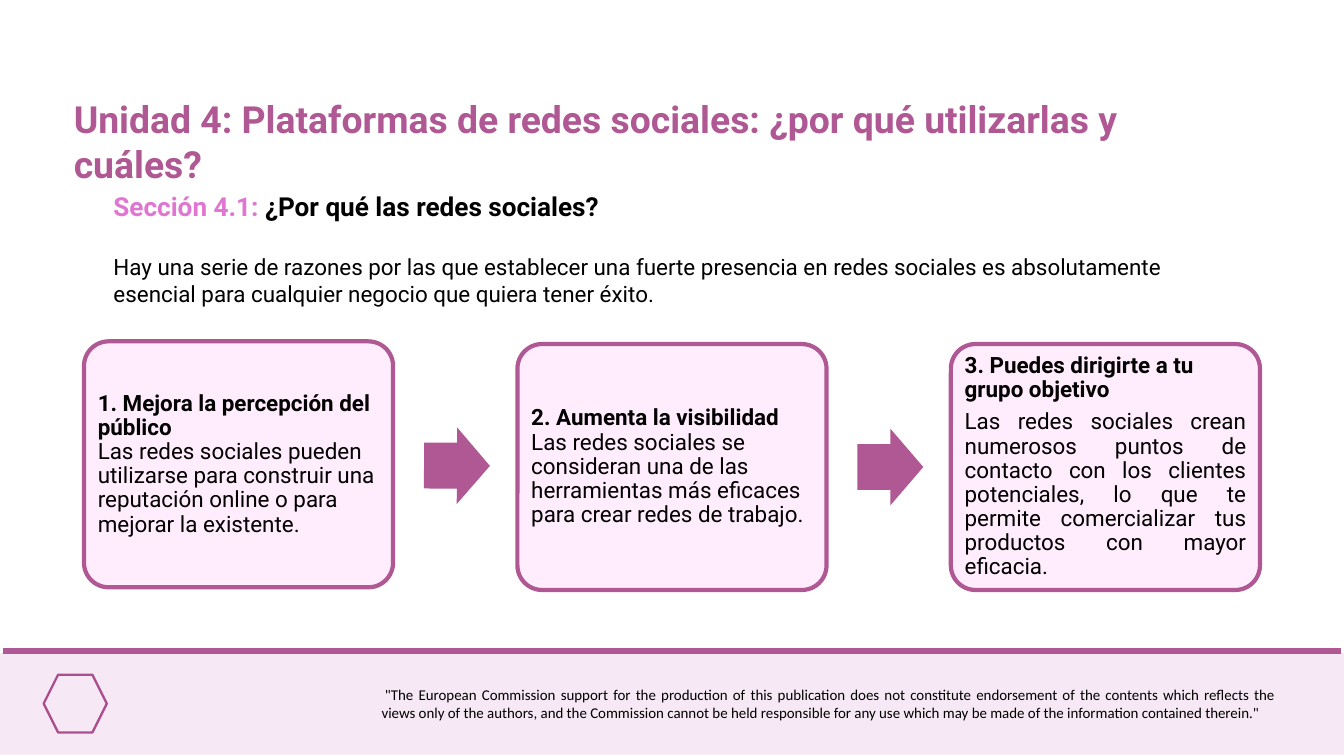
import pptx
import pptx.dml.color
import pptx.enum.shapes
import pptx.enum.text
import pptx.oxml
import pptx.util

Inches = pptx.util.Inches
Shapes = pptx.enum.shapes.MSO_SHAPE
Anchor = pptx.enum.text.MSO_ANCHOR
Align = pptx.enum.text.PP_ALIGN

COLORS = {
    "plum": "B05894",
    "orchid": "E076D1",
    "blush": "FFECFC",
    "footer": "F6E9F5",
    "icon": "AB4E8E",
    "text": "000000",
}

CARD_LEFT, CARD_PITCH = 1.25, 6.45
CARD_WIDTH, CARD_HEIGHT = 4.6, 3.66
CARDS = [
    (5.08, "1. Mejora la percepción del público",
     "Las redes sociales pueden utilizarse para construir una reputación online o para mejorar la existente."),
    (5.12, "2. Aumenta la visibilidad",
     "Las redes sociales se consideran una de las herramientas más eficaces para crear redes de trabajo."),
    (5.12, "3. Puedes dirigirte a tu grupo objetivo",
     "Las redes sociales crean numerosos puntos de contacto con los clientes potenciales, "
     "lo que te permite comercializar tus productos con mayor eficacia."),
]
ARROWS = [(6.36, 0.3), (6.38, 0)]


class SlideBuilder:
    def __init__(self, slide):
        self.slide = slide
        self.font = "Roboto"

    def color(self, name):
        return pptx.dml.color.RGBColor.from_string(COLORS[name])

    def format(self, run, size, color="text", bold=False, font=None):
        run.font.name = font or self.font
        run.font.size = pptx.util.Pt(size)
        run.font.bold = bold
        run.font.color.rgb = self.color(color)

    def shape(self, kind, left, top, width, height, fill=None, line=None, weight=1):
        shape = self.slide.shapes.add_shape(
            kind, Inches(left), Inches(top), Inches(width), Inches(height))
        shape.shadow.inherit = False
        if fill:
            shape.fill.solid()
            shape.fill.fore_color.rgb = self.color(fill)
        else:
            shape.fill.background()
        if line:
            shape.line.color.rgb = self.color(line)
            shape.line.width = pptx.util.Pt(weight)
        else:
            shape.line.fill.background()
        return shape

    def rule(self, left, right, top, color, weight):
        connector = self.slide.shapes.add_connector(
            pptx.enum.shapes.MSO_CONNECTOR.STRAIGHT,
            Inches(left), Inches(top), Inches(right), Inches(top))
        connector.line.color.rgb = self.color(color)
        connector.line.width = pptx.util.Pt(weight)
        connector._element.spPr.append(pptx.oxml.parse_xml(
            '<a:effectLst xmlns:a="http://schemas.openxmlformats.org/drawingml/2006/main"/>'))

    def text(self, left, top, width, height, text, size, **style):
        box = self.slide.shapes.add_textbox(
            Inches(left), Inches(top), Inches(width), Inches(height))
        text_frame = box.text_frame
        text_frame.word_wrap = True
        text_frame.text = text
        self.format(text_frame.paragraphs[0].runs[0], size, **style)
        return text_frame

    def card(self, left, top, heading, body, separate_body):
        shape = self.shape(Shapes.ROUNDED_RECTANGLE, left, top,
                           CARD_WIDTH, CARD_HEIGHT, "blush", "plum", 4.5)
        shape.adjustments[0] = 0.1
        text_frame = shape.text_frame
        text_frame.word_wrap = True
        text_frame.vertical_anchor = Anchor.MIDDLE
        text_frame.margin_left = text_frame.margin_right = Inches(0.1)
        text_frame.margin_top = text_frame.margin_bottom = Inches(0.1)
        text_frame.text = heading + ("\n" if separate_body else "\v") + body
        for paragraph in text_frame.paragraphs:
            paragraph.alignment = Align.LEFT
            paragraph.line_spacing = 0.9
            paragraph.space_after = pptx.util.Pt(8.4)
        if separate_body:
            text_frame.paragraphs[-1].alignment = Align.JUSTIFY
        runs = [run for paragraph in text_frame.paragraphs for run in paragraph.runs]
        for run, bold in zip(runs, (True, False)):
            self.format(run, 24, bold=bold)

    def arrow(self, left, top, rotation):
        arrow = self.shape(Shapes.RIGHT_ARROW, left, top, 0.98, 1.14, "plum")
        arrow.adjustments[0] = 0.6
        arrow.adjustments[1] = 0.5
        arrow.rotation = rotation


def main():
    presentation = pptx.Presentation()
    presentation.slide_width = Inches(20)
    presentation.slide_height = Inches(11.25)
    builder = SlideBuilder(presentation.slides.add_slide(presentation.slide_layouts[6]))

    builder.shape(Shapes.RECTANGLE, 0, 9.72, 20, 1.51, "footer")
    builder.rule(0.05, 19.95, 9.69, "plum", 6.75)
    builder.shape(Shapes.HEXAGON, 0.65, 10.04, 0.94, 0.86, line="icon", weight=2.5)
    disclaimer = builder.text(
        5.58, 10.15, 13.5, 0.64,
        '"The European Commission support for the production of this publication does not '
        "constitute endorsement of the contents which reflects the views only of the authors, "
        "and the Commission cannot be held responsible for any use which may be made of the "
        'information contained therein."',
        16, font="Calibri")
    paragraph = disclaimer.paragraphs[0]
    paragraph.alignment = Align.JUSTIFY
    paragraph._p.get_or_add_pPr().set("indent", str(Inches(0.05)))

    builder.text(1, 1.38, 16.67, 1.45,
                 "Unidad 4: Plataformas de redes sociales: ¿por qué utilizarlas y cuáles?",
                 40, color="plum", bold=True)

    section = builder.text(1.59, 2.79, 16.41, 1.85, "Sección 4.1: ", 28,
                           color="orchid", bold=True)
    question = section.paragraphs[0].add_run()
    question.text = "¿Por qué las redes sociales?"
    builder.format(question, 28, bold=True)
    introduction = section.add_paragraph()
    introduction.text = (
        "Hay una serie de razones por las que establecer una fuerte presencia en redes sociales "
        "es absolutamente esencial para cualquier negocio que quiera tener éxito.")
    introduction.space_before = pptx.util.Pt(33)
    builder.format(introduction.runs[0], 24)

    for index, (top, heading, body) in enumerate(CARDS):
        builder.card(CARD_LEFT + index * CARD_PITCH, top, heading, body,
                     separate_body=index == 2)
    for index, (top, rotation) in enumerate(ARROWS):
        builder.arrow(6.31 + index * CARD_PITCH, top, rotation)

    presentation.save("out.pptx")


if __name__ == "__main__":
    main()
